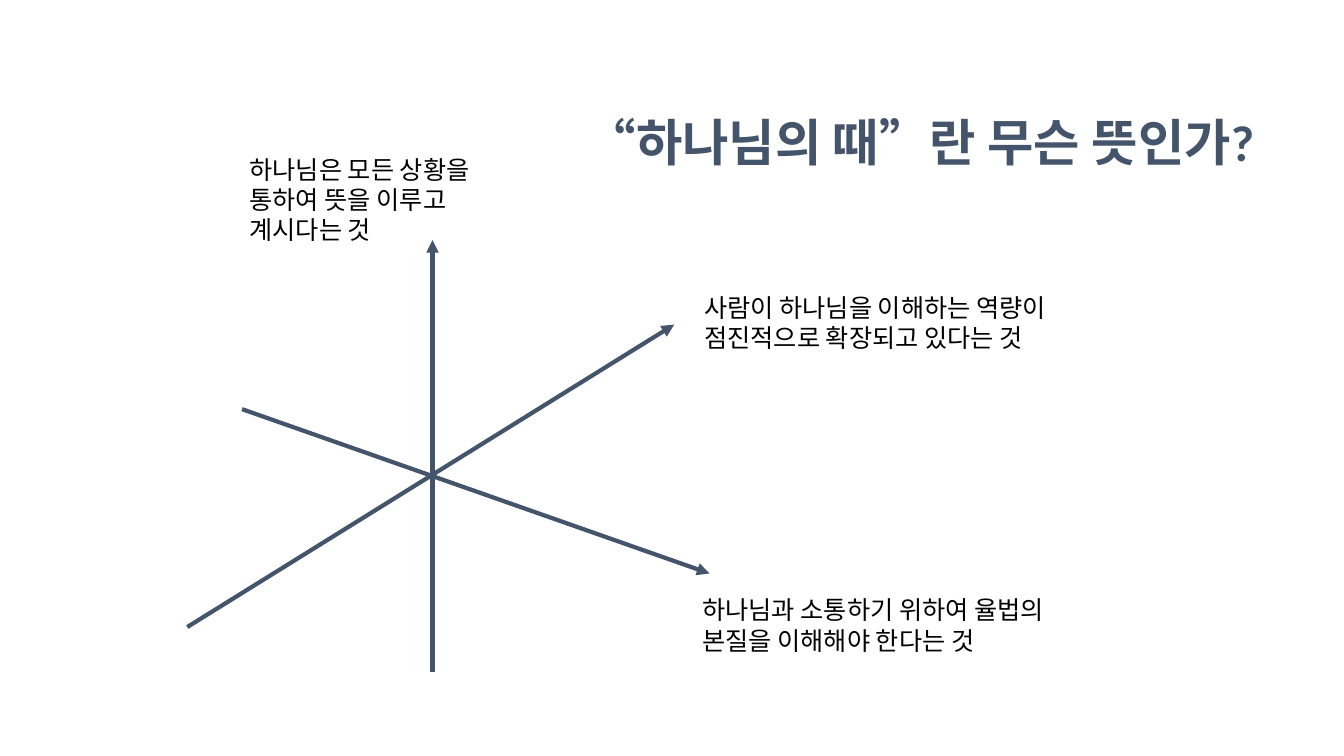
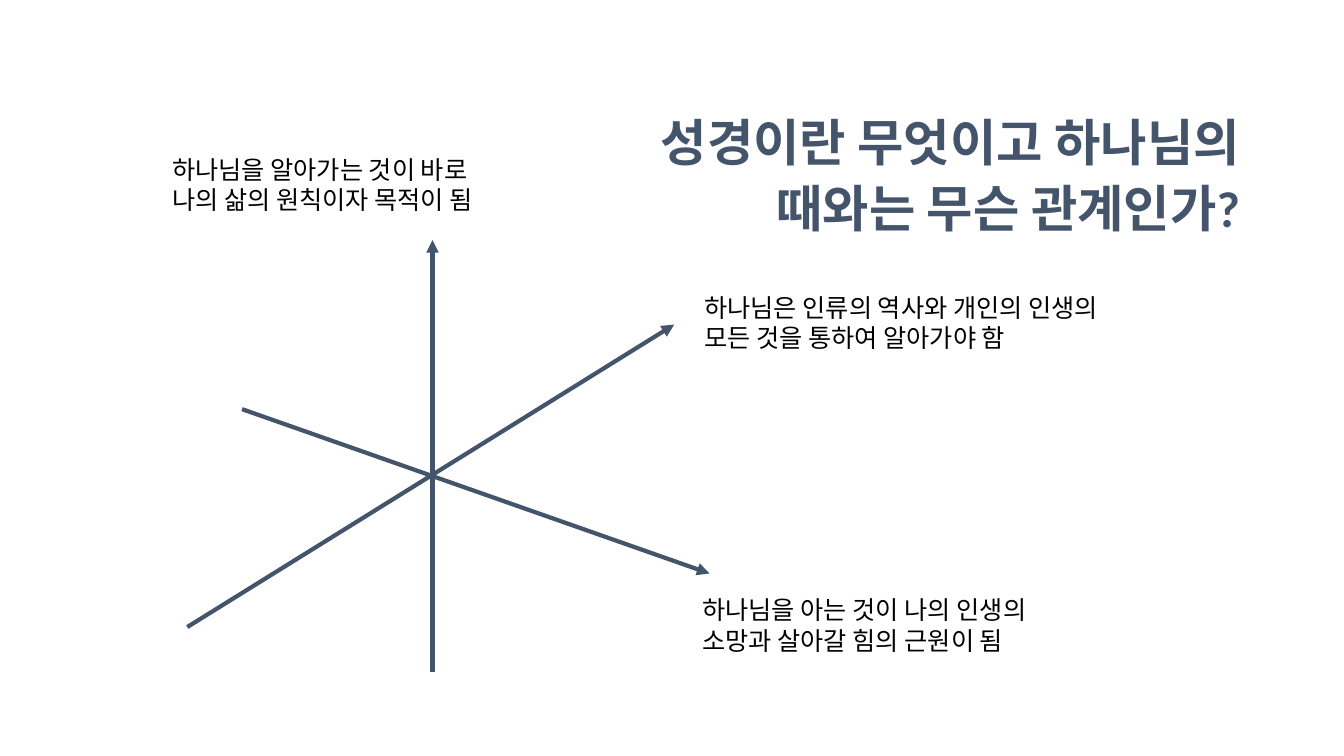
from lxml import etree
from pptx import Presentation
from pptx.dml.color import RGBColor
from pptx.enum.shapes import MSO_CONNECTOR
from pptx.enum.text import MSO_ANCHOR, MSO_AUTO_SIZE, PP_ALIGN
from pptx.oxml.ns import qn
from pptx.util import Cm, Pt

STRAIGHT = MSO_CONNECTOR.STRAIGHT
TOP = MSO_ANCHOR.TOP
NO_FIT, FIT_SHAPE = MSO_AUTO_SIZE.NONE, MSO_AUTO_SIZE.SHAPE_TO_FIT_TEXT
RIGHT = PP_ALIGN.RIGHT

FONT = "Calibri"
SLATE, BLACK = "44546A", "000000"
TITLE_ONLY = 5

# Content: title with its box, then one label (text, width, height) per axis; lengths in cm
SLIDES = [
    {
        "title": "“하나님의 때”란 무슨 뜻인가?",
        "title_box": (13.97, 2.51, 17.3, 2.57),
        "labels": {
            "diagonal": ("사람이 하나님을 이해하는 역량이 점진적으로 확장되고 있다는 것", 10.24, 1.8),
            "vertical": ("하나님은 모든 상황을 통하여 뜻을 이루고 계시다는 것", 7.09, 2.57),
            "descending": ("하나님과 소통하기 위하여 율법의 본질을 이해해야 한다는 것", 10.24, 1.8),
        },
    },
    {
        "title": "성경이란 무엇이고 하나님의 때와는 무슨 관계인가?",
        "title_box": (14.81, 2.51, 16.69, 3.61),
        "labels": {
            "diagonal": ("하나님은 인류의 역사와 개인의 인생의 모든 것을 통하여 알아가야 함", 10.87, 1.8),
            "vertical": ("하나님을 알아가는 것이 바로 나의 삶의 원칙이자 목적이 됨", 9.04, 1.8),
            "descending": ("하나님을 아는 것이 나의 인생의 소망과 살아갈 힘의 근원이 됨", 10.24, 1.8),
        },
    },
]

# Shared axes: start, arrow tip, label corner, and which side of the label is fixed
AXES = {
    "diagonal": ((4.72, 15.8), (16.99, 8.18), (17.5, 7.24), "left"),
    "vertical": ((10.9, 16.94), (10.9, 6.05), (13.13, 3.76), "right"),
    "descending": ((6.1, 10.31), (17.88, 14.45), (17.45, 14.86), "left"),
}


def color(hex_text):
    return RGBColor.from_string(hex_text)


def add_run(paragraph, text, size, hex_text, bold=False):
    run = paragraph.add_run()
    run.text = text
    run.font.name = FONT
    run.font.size = Pt(size)
    run.font.bold = bold
    run.font.color.rgb = color(hex_text)


def fill_title(slide, text, box):
    title = slide.shapes.title
    title.left, title.top, title.width, title.height = map(Cm, box)
    frame = title.text_frame
    frame.word_wrap = True
    frame.auto_size = NO_FIT
    frame.vertical_anchor = TOP
    paragraph = frame.paragraphs[0]
    paragraph.alignment = RIGHT
    paragraph.line_spacing = 1.1
    add_run(paragraph, text, 36, SLATE, bold=True)


def add_arrow(group, start, tip):
    arrow = group.shapes.add_connector(STRAIGHT, *map(Cm, start + tip))
    arrow.line.color.rgb = color(SLATE)
    arrow.line.width = Pt(3)
    etree.SubElement(arrow.line._get_or_add_ln(), qn("a:tailEnd"), type="triangle")
    # An empty effect list removes the theme shadow
    etree.SubElement(arrow._element.spPr, qn("a:effectLst"))


def add_label(group, corner, side, text, width, height):
    x, top = corner
    left = x - width if side == "right" else x
    label = group.shapes.add_textbox(Cm(left), Cm(top), Cm(width), Cm(height))
    frame = label.text_frame
    frame.word_wrap = True
    frame.auto_size = FIT_SHAPE
    add_run(frame.paragraphs[0], text, 18, BLACK)


def main():
    presentation = Presentation()
    presentation.slide_width, presentation.slide_height = Cm(33.87), Cm(19.05)
    for content in SLIDES:
        slide = presentation.slides.add_slide(presentation.slide_layouts[TITLE_ONLY])
        fill_title(slide, content["title"], content["title_box"])
        # Each axis is grouped with its label
        for name, (start, tip, corner, side) in AXES.items():
            group = slide.shapes.add_group_shape()
            add_arrow(group, start, tip)
            add_label(group, corner, side, *content["labels"][name])
    presentation.save("out.pptx")


if __name__ == "__main__":
    main()
